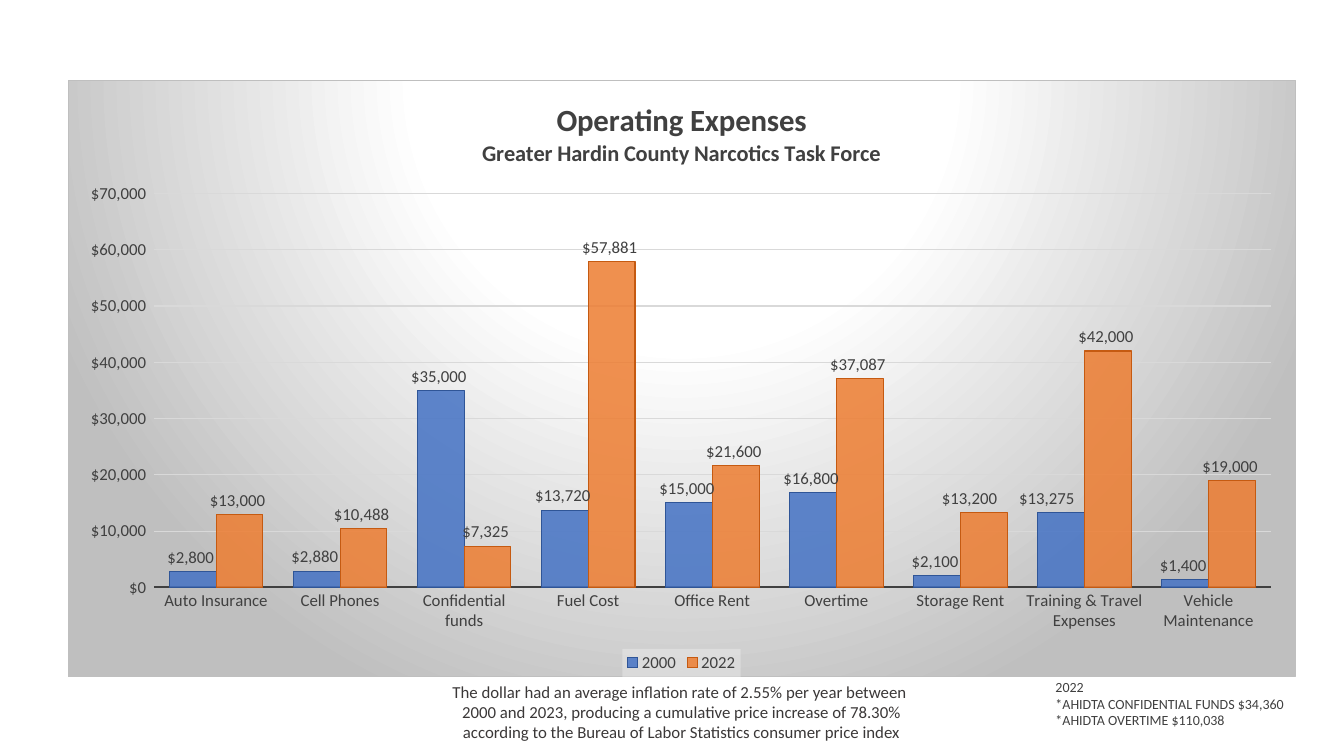
import pptx
import pptx.chart.data
import pptx.dml.color
import pptx.enum.chart
import pptx.enum.text
import pptx.oxml
import pptx.oxml.ns
import pptx.util

Inches = pptx.util.Inches
Pt = pptx.util.Pt
DARK = "404040"
DOLLARS = '"$"#,##0_);[Red]\\("$"#,##0\\)'
NAMESPACES = pptx.oxml.ns.nsdecls("c", "a")
EXPENSES = [
    ("Auto Insurance", 2800, 13000),
    ("Cell Phones", 2880, 10488),
    ("Confidential funds", 35000, 7325),
    ("Fuel Cost", 13720, 57881),
    ("Office Rent", 15000, 21600),
    ("Overtime", 16800, 37087),
    ("Storage Rent", 2100, 13200),
    ("Training & Travel Expenses", 13275, 42000),
    ("Vehicle Maintenance", 1400, 19000),
]
YEARS = [
    {"year": "2000", "fill": "4472C4", "edge": "2F5597", "shifted": 7},
    {"year": "2022", "fill": "ED7D31", "edge": "C55A11", "shifted": 6},
]


def color(value):
    """Turn a hex string into a colour."""
    return pptx.dml.color.RGBColor.from_string(value)


def style(font, size=12, ink=DARK, bold=False):
    """Format a font."""
    font.name, font.size, font.bold = "Calibri", Pt(size), bold
    font.color.rgb = color(ink)


def write(frame, text, first=False, align=None, **look):
    """Write one formatted paragraph into a text frame."""
    paragraph = frame.paragraphs[0] if first else frame.add_paragraph()
    paragraph.text = text
    if align is not None:
        paragraph.alignment = align
    for run in paragraph.runs:
        style(run.font, **look)


def outline(line, ink, width=0.75):
    """Format a line."""
    line.color.rgb = color(ink)
    line.width = Pt(width)


def shape_properties(content):
    """Build chart shape properties from fill and line markup."""
    return pptx.oxml.parse_xml(f"<c:spPr {NAMESPACES}>{content}</c:spPr>")


def layout(**measures):
    """Build a manual chart layout from fractions of the chart."""
    target = '<c:layoutTarget val="inner"/>' if "w" in measures else ""
    modes = '<c:xMode val="edge"/><c:yMode val="edge"/>' if target else ""
    values = "".join(f'<c:{key} val="{value}"/>' for key, value in measures.items())
    return pptx.oxml.parse_xml(
        f"<c:layout {NAMESPACES}><c:manualLayout>{target}{modes}{values}"
        "</c:manualLayout></c:layout>"
    )


def format_labels(labels):
    """Format value labels above the bars."""
    labels.position = pptx.enum.chart.XL_LABEL_POSITION.OUTSIDE_END
    style(labels.font)


def format_series(series, year):
    """Colour one year's bars and label them, with one label moved left."""
    bars = series.format
    bars.fill.solid()
    bars.fill.fore_color.rgb = color(year["fill"])
    opacity = pptx.oxml.parse_xml(f'<a:alpha {NAMESPACES} val="85000"/>')
    series._element.xpath("c:spPr/a:solidFill/a:srgbClr")[0].append(opacity)
    outline(bars.line, year["edge"])
    labels = series.data_labels
    labels.show_value = True
    labels.number_format, labels.number_format_is_linked = DOLLARS, False
    format_labels(labels)
    format_labels(series.points[year["shifted"]].data_label)
    index = series._element.xpath("c:dLbls/c:dLbl/c:idx")[0]
    index.addnext(layout(x=-0.01, y=0))


def format_axes(chart):
    """Format both axes and the gridlines."""
    none = pptx.enum.chart.XL_TICK_MARK.NONE
    for axis in (chart.category_axis, chart.value_axis):
        axis.major_tick_mark = axis.minor_tick_mark = none
        style(axis.tick_labels.font)
    outline(chart.category_axis.format.line, DARK, 1.5)
    amounts = chart.value_axis
    amounts.minimum_scale, amounts.maximum_scale = 0, 70000
    amounts.major_unit = 10000
    amounts.format.line.fill.background()
    outline(amounts.major_gridlines.format.line, "D9D9D9")
    amounts.tick_labels.number_format = DOLLARS
    amounts.tick_labels.number_format_is_linked = False


def format_legend(chart):
    """Put the legend at the bottom on a pale panel."""
    chart.has_legend = True
    legend = chart.legend
    legend.position = pptx.enum.chart.XL_LEGEND_POSITION.BOTTOM
    legend.include_in_layout = False
    style(legend.font)
    panel = shape_properties(
        '<a:solidFill><a:srgbClr val="F2F2F2"><a:alpha val="39000"/>'
        "</a:srgbClr></a:solidFill><a:ln><a:noFill/></a:ln>"
    )
    legend._element.xpath("c:overlay")[0].addnext(panel)


def format_background(chart):
    """Fill the chart area with a radial gradient and a thin border."""
    stops = "".join(
        f'<a:gs pos="{position}000"><a:srgbClr val="{tint}"/></a:gs>'
        for position, tint in ((0, "FFFFFF"), (39, "FFFFFF"), (100, "BFBFBF"))
    )
    area = shape_properties(
        f'<a:gradFill><a:gsLst>{stops}</a:gsLst><a:path path="circle">'
        '<a:fillToRect l="50000" t="-80000" r="50000" b="180000"/></a:path>'
        '</a:gradFill><a:ln w="9525"><a:solidFill><a:srgbClr val="BFBFBF"/>'
        "</a:solidFill></a:ln>"
    )
    chart._chartSpace.xpath("c:chart")[0].addnext(area)


def add_expense_chart(slide, left, top, width, height):
    """Add the clustered columns that compare both years."""
    expenses = pptx.chart.data.CategoryChartData(number_format=DOLLARS)
    categories, *amounts = zip(*EXPENSES)
    expenses.categories = categories
    for year, values in zip(YEARS, amounts):
        expenses.add_series(year["year"], values)
    chart = slide.shapes.add_chart(
        pptx.enum.chart.XL_CHART_TYPE.COLUMN_CLUSTERED,
        Inches(left), Inches(top), Inches(width), Inches(height), expenses,
    ).chart
    style(chart.font, size=10, ink="000000")
    heading = chart.chart_title
    heading.include_in_layout = False
    write(heading.text_frame, "Operating Expenses", first=True, size=22, bold=True)
    write(heading.text_frame, "Greater Hardin County Narcotics Task Force",
          size=16, bold=True)
    plot = chart.plots[0]
    plot.gap_width, plot.overlap, plot.vary_by_categories = 65, 0, False
    for series, year in zip(plot.series, YEARS):
        format_series(series, year)
    format_axes(chart)
    format_legend(chart)
    format_background(chart)
    plot_area = chart._chartSpace.xpath("c:chart/c:plotArea")[0]
    for automatic in plot_area.xpath("c:layout"):
        plot_area.remove(automatic)
    plot_area.insert(0, layout(x=0.07, y=0.19, w=0.91, h=0.66))


def add_note(slide, left, top, width, height, lines, wrap=True, **look):
    """Add a text box with one paragraph for each line."""
    note = slide.shapes.add_textbox(
        Inches(left), Inches(top), Inches(width), Inches(height)
    ).text_frame
    note.word_wrap = wrap
    note.auto_size = pptx.enum.text.MSO_AUTO_SIZE.SHAPE_TO_FIT_TEXT
    for number, line in enumerate(lines):
        write(note, line, first=number == 0, **look)


def main():
    """Build the expenses slide and save it."""
    deck = pptx.Presentation()
    deck.slide_width, deck.slide_height = Inches(13.33), Inches(7.5)
    slide = deck.slides.add_slide(deck.slide_layouts[6])
    add_expense_chart(slide, 0.67, 0.79, 12.18, 5.93)
    inflation = [
        "The dollar had an average inflation rate of 2.55% per year between \v"
        "2000 and 2023, producing a cumulative price increase of 78.30%",
        "according to the Bureau of Labor Statistics consumer price index",
    ]
    add_note(slide, 0.67, 6.71, 12.18, 0.71, inflation, ink="3B3838",
             align=pptx.enum.text.PP_ALIGN.CENTER)
    funds = ["2022", "*AHIDTA CONFIDENTIAL FUNDS $34,360",
             "*AHIDTA OVERTIME $110,038"]
    add_note(slide, 10.37, 6.68, 2.52, 0.61, funds, wrap=False, size=10)
    deck.save("out.pptx")


if __name__ == "__main__":
    main()
